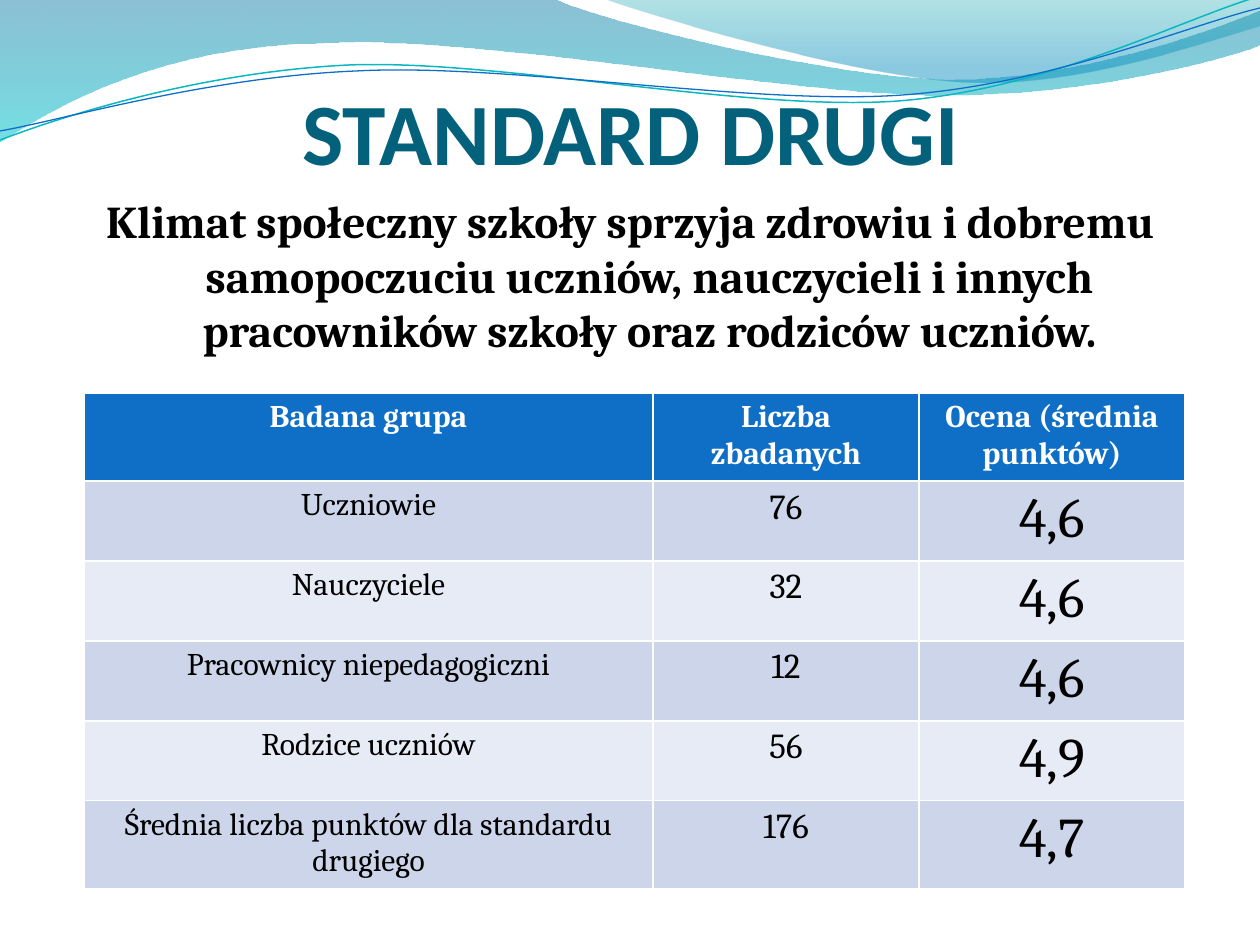
import pptx
import pptx.util
import pptx.dml.color
import pptx.enum.text
import pptx.oxml.ns
import lxml.etree

RGBColor = pptx.dml.color.RGBColor
WHITE = RGBColor(0xFF, 0xFF, 0xFF)
BLACK = RGBColor(0, 0, 0)
BLUE = RGBColor(0x0F, 0x6F, 0xC6)
TEAL = RGBColor(0x0A, 0xB8, 0xBF)
TITLE = RGBColor(0x04, 0x61, 0x7B)
BAND_DARK = RGBColor(0xCC, 0xD5, 0xEA)
BAND_LIGHT = RGBColor(0xE7, 0xEB, 0xF5)
DEEP_BLUE = RGBColor(0x00, 0x74, 0xA1)
AQUA = RGBColor(0x00, 0xC6, 0xCF)
SEA = RGBColor(0x00, 0xA1, 0xA9)
SKY = RGBColor(0x00, 0x8B, 0xBF)

EMU_PER_PX = 914400 / 126
CENTER = pptx.enum.text.PP_ALIGN.CENTER
ANCHOR = pptx.enum.text.MSO_ANCHOR
qn = pptx.oxml.ns.qn


def px(n):
    return pptx.util.Emu(round(n * EMU_PER_PX))


class Deck:
    def __init__(self, width, height):
        self.prs = pptx.Presentation()
        self.prs.slide_width, self.prs.slide_height = px(width), px(height)
        self.s = self.prs.slides.add_slide(self.prs.slide_layouts[6])
        self.font = "Cambria"

    def outline(self, start, segments, close):
        fb = self.s.shapes.build_freeform(px(start[0]), px(start[1]), scale=1.0)
        fb.add_line_segments([(px(seg[-2]), px(seg[-1])) for seg in segments], close=close)
        sp = fb.convert_to_shape()
        sp.shadow.inherit = False
        lines = sp._element.spPr.findall(".//" + qn("a:lnTo"))
        for line, seg in zip(lines, segments):
            if len(seg) == 6:
                self.bend(line, seg, sp.left, sp.top)
        return sp

    def bend(self, line, seg, left, top):
        line.tag = qn("a:cubicBezTo")
        for child in list(line):
            line.remove(child)
        for x, y in zip(seg[::2], seg[1::2]):
            pt = lxml.etree.SubElement(line, qn("a:pt"))
            pt.set("x", str(px(x) - left))
            pt.set("y", str(px(y) - top))

    def wave(self, start, segments, stops):
        sp = self.outline(start, segments, True)
        sp.line.fill.background()
        sp.fill.gradient()
        sp.fill.gradient_angle = 270
        for stop, (position, color, opacity) in zip(sp.fill.gradient_stops, stops):
            stop.position = position
            stop.color.rgb = color
        colors = sp._element.spPr.findall(".//" + qn("a:srgbClr"))
        for clr, (position, color, opacity) in zip(colors, stops):
            alpha = lxml.etree.SubElement(clr, qn("a:alpha"))
            alpha.set("val", str(opacity * 1000))

    def curve(self, start, segments, color, width):
        sp = self.outline(start, segments, False)
        sp.fill.background()
        sp.line.color.rgb = color
        sp.line.width = pptx.util.Pt(width)

    def style(self, p, size, color, bold, font=None):
        p.alignment = CENTER
        for r in p.runs:
            r.font.name = font or self.font
            r.font.size = pptx.util.Pt(size)
            r.font.bold = bold
            r.font.color.rgb = color

    def text(self, box, text, size, color, font=None, anchor=ANCHOR.TOP,
             side=13, bottom=6, hanging=0, before=0):
        sp = self.s.shapes.add_textbox(*map(px, box))
        tf = sp.text_frame
        tf.word_wrap = True
        tf.vertical_anchor = anchor
        tf.margin_left = tf.margin_right = px(side)
        tf.margin_top, tf.margin_bottom = px(6), px(bottom)
        tf.text = text
        p = tf.paragraphs[0]
        self.style(p, size, color, True, font)
        p.space_before = pptx.util.Pt(before)
        if hanging:
            pPr = p._p.get_or_add_pPr()
            pPr.set("marL", str(px(hanging)))
            pPr.set("indent", str(-px(hanging)))

    def table(self, left, top, widths, row_height, rows, sizes):
        frame = self.s.shapes.add_table(len(rows), len(widths), px(left), px(top),
                                        px(sum(widths)), px(row_height * len(rows)))
        table = frame.table
        for column, width in zip(table.columns, widths):
            column.width = px(width)
        for i, row in enumerate(rows):
            header = i == 0
            fill = BLUE if header else BAND_DARK if i % 2 else BAND_LIGHT
            for j, text in enumerate(row):
                cell = table.cell(i, j)
                cell.fill.solid()
                cell.fill.fore_color.rgb = fill
                cell.text = text
                self.style(cell.text_frame.paragraphs[0], 18 if header else sizes[j],
                           WHITE if header else BLACK, header)


def main():
    deck = Deck(1260, 945)
    deck.wave((0, 0), [(554, -1), (600, 21, 837, 79, 955, 79),
                       (1074, 79, 1207, 33, 1260, 11), (1261, 45),
                       (1239, 55, 1096, 96, 940, 95), (784, 95, 481, 35, 324, 43),
                       (163, 45, 58, 105, -1, 142)],
              [(0, DEEP_BLUE, 45), (1, AQUA, 55)])
    deck.wave((604, -1), [(643, 14, 859, 78, 969, 82),
                          (1079, 87, 1211, 40, 1260, 26), (1260, 0)],
              [(0, SEA, 30), (0.8, SKY, 45)])
    deck.curve((0, 140), [(60, 117, 199, 72, 349, 65), (498, 59, 747, 112, 898, 101),
                          (1050, 89, 1182, 19, 1257, -3)], TEAL, 0.85)
    deck.curve((0, 131), [(59, 121, 207, 77, 357, 71), (508, 63, 752, 106, 903, 95),
                          (1053, 84, 1186, 26, 1260, 8)], BLUE, 0.75)
    deck.text((64, 26, 1134, 157), "STANDARD DRUGI", 50, TITLE, font="Calibri",
              anchor=ANCHOR.BOTTOM, side=0, bottom=0)
    deck.text((64, 187, 1134, 728),
              "Klimat społeczny szkoły sprzyja zdrowiu i dobremu samopoczuciu uczniów, "
              "nauczycieli i innych pracowników szkoły oraz rodziców uczniów.",
              26, BLACK, hanging=38, before=5)
    deck.table(84, 393, [569, 266, 266], 52, [
        ("Badana grupa", "Liczba zbadanych", "Ocena (średnia punktów)"),
        ("Uczniowie", "76", "4,6"),
        ("Nauczyciele", "32", "4,6"),
        ("Pracownicy niepedagogiczni", "12", "4,6"),
        ("Rodzice uczniów", "56", "4,9"),
        ("Średnia liczba punktów dla standardu drugiego", "176", "4,7"),
    ], sizes=(18, 20, 32))
    deck.prs.save("out.pptx")


if __name__ == "__main__":
    main()
